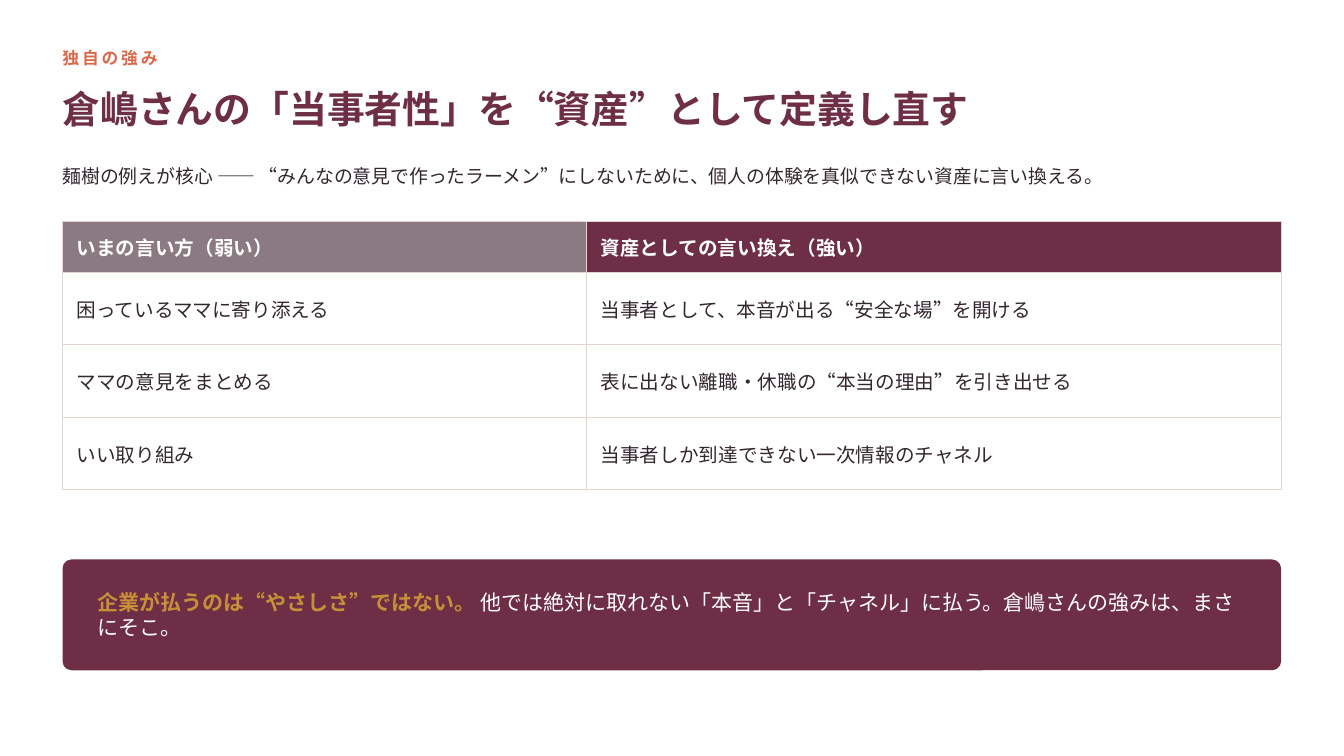
import pptx
import pptx.util
import pptx.dml.color
import pptx.enum.shapes
import pptx.enum.text
import pptx.oxml

Pt = pptx.util.Pt
NS = 'xmlns:a="http://schemas.openxmlformats.org/drawingml/2006/main"'
FONT = "Noto Sans CJK JP"
COLORS = {
    "plum": "6D2E46",
    "coral": "D9694A",
    "ink": "352730",
    "mauve": "8C7A82",
    "gold": "C79038",
    "sand": "E4D6CE",
    "white": "FFFFFF",
}
LEFT, WIDTH = 44.64, 870.48
CALLOUT_TOP, CALLOUT_HEIGHT, CALLOUT_PAD = 399.6, 79.2, 25.2


class Deck:
    def __init__(self):
        self.prs = pptx.Presentation()
        self.prs.slide_width, self.prs.slide_height = Pt(960), Pt(540)
        self.s = None

    def add_slide(self):
        self.s = self.prs.slides.add_slide(self.prs.slide_layouts[5])
        fill = self.s.background.fill
        fill.solid()
        fill.fore_color.rgb = self.rgb("white")

    def rgb(self, name):
        return pptx.dml.color.RGBColor.from_string(COLORS[name])

    def style(self, r, size, color, bold=False, spacing=0):
        r.font.name = FONT
        r.font.size = Pt(size)
        r.font.bold = bold
        r.font.color.rgb = self.rgb(color)
        rPr = r.font._element
        rPr.append(pptx.oxml.parse_xml(f'<a:ea {NS} typeface="{FONT}"/>'))
        if spacing:
            rPr.set("spc", str(spacing * 100))

    def frame(self, sp):
        tf = sp.text_frame
        tf.word_wrap = True
        tf.auto_size = pptx.enum.text.MSO_AUTO_SIZE.NONE
        tf.vertical_anchor = pptx.enum.text.MSO_ANCHOR.MIDDLE
        tf.margin_left = tf.margin_top = tf.margin_right = tf.margin_bottom = 0
        return tf

    def title(self, text, left, top, width, height, size, color):
        sp = self.s.shapes.title
        sp.left, sp.top, sp.width, sp.height = map(Pt, (left, top, width, height))
        tf = self.frame(sp)
        tf.text = text
        p = tf.paragraphs[0]
        p.alignment = pptx.enum.text.PP_ALIGN.LEFT
        self.style(p.runs[0], size, color, bold=True)

    def text(self, parts, left, top, width, height, size, spacing=0):
        sp = self.s.shapes.add_textbox(*map(Pt, (left, top, width, height)))
        p = self.frame(sp).paragraphs[0]
        for text, color, bold in parts:
            r = p.add_run()
            r.text = text
            self.style(r, size, color, bold, spacing)

    def panel(self, left, top, width, height, color, radius):
        kind = pptx.enum.shapes.MSO_SHAPE.ROUNDED_RECTANGLE
        sp = self.s.shapes.add_shape(kind, *map(Pt, (left, top, width, height)))
        sp.adjustments[0] = radius / height
        sp.shadow.inherit = False
        sp.fill.solid()
        sp.fill.fore_color.rgb = self.rgb(color)
        sp.line.fill.background()

    def borders(self, cell, color):
        tcPr = cell._tc.get_or_add_tcPr()
        for side in "LRTB":
            tcPr.append(pptx.oxml.parse_xml(
                f'<a:ln{side} {NS} w="12700"><a:solidFill>'
                f'<a:srgbClr val="{COLORS[color]}"/></a:solidFill></a:ln{side}>'))

    def table(self, rows, left, top, widths, heights, header_fills, size):
        box = map(Pt, (left, top, sum(widths), sum(heights)))
        table = self.s.shapes.add_table(len(rows), len(widths), *box).table
        table.horz_banding = False
        for column, width in zip(table.columns, widths):
            column.width = Pt(width)
        for i, (row, height) in enumerate(zip(rows, heights)):
            table.rows[i].height = Pt(height)
            for j, text in enumerate(row):
                header = i == 0
                cell = table.cell(i, j)
                cell.text_frame.text = text
                cell.vertical_anchor = pptx.enum.text.MSO_ANCHOR.MIDDLE
                cell.margin_left = cell.margin_right = Pt(10.08)
                cell.margin_top = cell.margin_bottom = Pt(4.32)
                self.borders(cell, "sand")
                cell.fill.solid()
                cell.fill.fore_color.rgb = self.rgb(header_fills[j] if header else "white")
                r = cell.text_frame.paragraphs[0].runs[0]
                self.style(r, size, "white" if header else "ink", header)


def main():
    deck = Deck()
    deck.add_slide()
    deck.text([("独自の強み", "coral", True)], LEFT, 30.24, 792, 21.6, 12, spacing=2)
    deck.title("倉嶋さんの「当事者性」を“資産”として定義し直す",
               LEFT, 51.84, WIDTH, 51.84, 27, "plum")
    lead = ("麺樹の例えが核心 ―― “みんなの意見で作ったラーメン”にしないために、"
            "個人の体験を真似できない資産に言い換える。")
    deck.text([(lead, "ink", False)], LEFT, 111.6, WIDTH, 28.8, 13.5)
    rows = [
        ("いまの言い方（弱い）", "資産としての言い換え（強い）"),
        ("困っているママに寄り添える", "当事者として、本音が出る“安全な場”を開ける"),
        ("ママの意見をまとめる", "表に出ない離職・休職の“本当の理由”を引き出せる"),
        ("いい取り組み", "当事者しか到達できない一次情報のチャネル"),
    ]
    deck.table(rows, LEFT, 158.4, (374.4, 496.08), [36] + [51.84] * 3,
               ("mauve", "plum"), 14)
    deck.panel(LEFT, CALLOUT_TOP, WIDTH, CALLOUT_HEIGHT, "plum", 6.5)
    callout = [
        ("企業が払うのは“やさしさ”ではない。 ", "gold", True),
        ("他では絶対に取れない「本音」と「チャネル」に払う。"
         "倉嶋さんの強みは、まさにそこ。", "white", False),
    ]
    deck.text(callout, LEFT + CALLOUT_PAD, CALLOUT_TOP,
              WIDTH - 2 * CALLOUT_PAD, CALLOUT_HEIGHT, 15)
    deck.prs.save("out.pptx")


if __name__ == "__main__":
    main()
